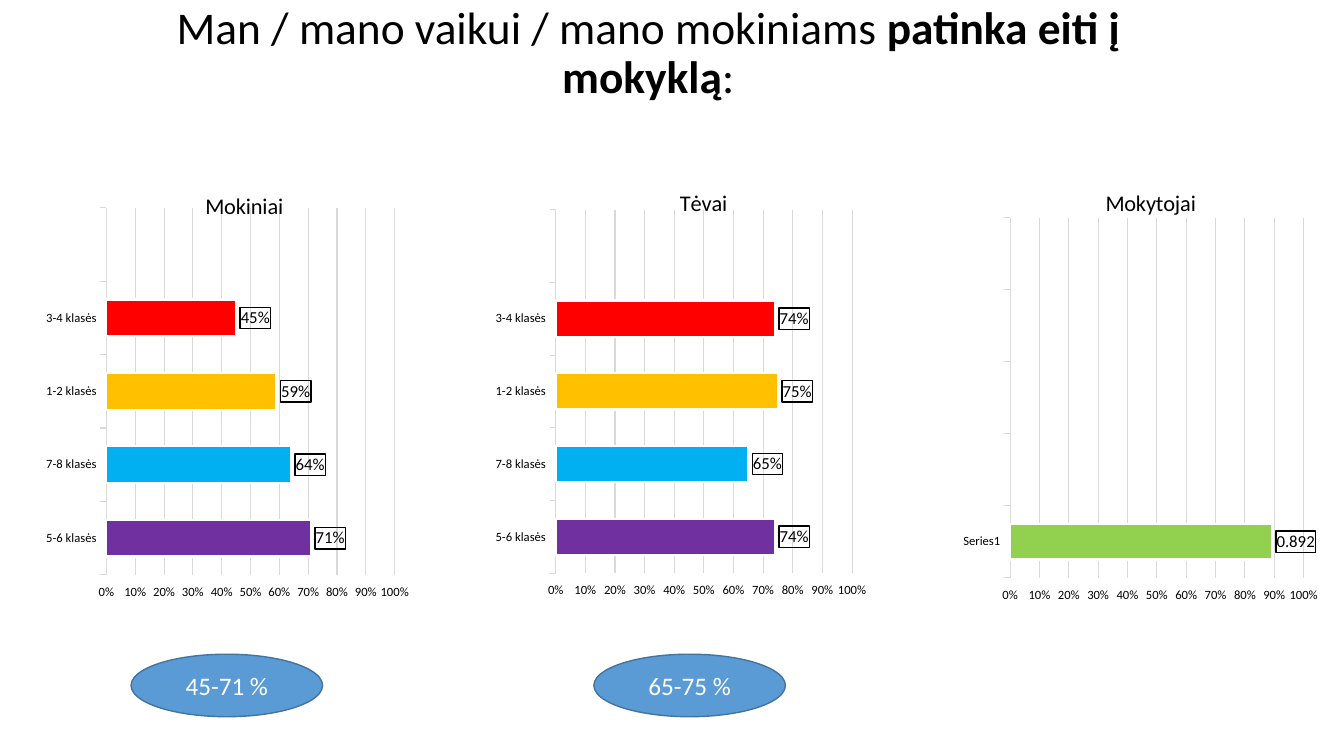
from lxml.etree import SubElement
from pptx import Presentation
from pptx.chart.data import CategoryChartData
from pptx.dml.color import RGBColor
from pptx.enum.chart import XL_CHART_TYPE, XL_LABEL_POSITION, XL_TICK_MARK
from pptx.enum.shapes import MSO_SHAPE
from pptx.enum.text import MSO_ANCHOR, PP_ALIGN
from pptx.oxml import parse_xml
from pptx.oxml.ns import nsdecls, qn
from pptx.util import Inches, Pt

FONT = "Calibri"
BLACK = RGBColor(0x00, 0x00, 0x00)
WHITE = RGBColor(0xFF, 0xFF, 0xFF)
GRID = RGBColor(0xD9, 0xD9, 0xD9)
BLUE = RGBColor(0x5B, 0x9B, 0xD5)
DARK_BLUE = RGBColor(0x43, 0x73, 0x9E)
PURPLE = RGBColor(0x70, 0x30, 0xA0)
SKY = RGBColor(0x00, 0xB0, 0xF0)
AMBER = RGBColor(0xFF, 0xC0, 0x00)
RED = RGBColor(0xFF, 0x00, 0x00)
GREEN = RGBColor(0x92, 0xD0, 0x50)


def set_font(font, size, color=BLACK, bold=False):
    font.name, font.size, font.bold = FONT, Pt(size), bold
    font.color.rgb = color


def set_layout(parent, index, **shares):
    """Place a chart part by shares of the chart's size."""
    for old in parent.findall(qn("c:layout")):
        parent.remove(old)
    layout = parse_xml(f"<c:layout {nsdecls('c')}/>")
    manual = SubElement(layout, qn("c:manualLayout"))
    if "w" in shares:
        SubElement(manual, qn("c:layoutTarget")).set("val", "inner")
    for axis in "xy":
        SubElement(manual, qn(f"c:{axis}Mode")).set("val", "edge")
    for name, share in shares.items():
        SubElement(manual, qn(f"c:{name}")).set("val", str(share))
    parent.insert(index, layout)


prs = Presentation()
prs.slide_width, prs.slide_height = Inches(13.33), Inches(7.5)
slide = prs.slides.add_slide(prs.slide_layouts[6])

# Heading
box = slide.shapes.add_textbox(Inches(0.85), Inches(0.05), Inches(11.16), Inches(0.97))
tf = box.text_frame
tf.word_wrap = True
tf.vertical_anchor = MSO_ANCHOR.MIDDLE
p = tf.paragraphs[0]
p.alignment = PP_ALIGN.CENTER
p.line_spacing = 0.9
for text, bold in [("Man / mano vaikui / mano mokiniams ", False),
                   ("patinka eiti į mokyklą", True), (":", False)]:
    r = p.add_run()
    r.text = text
    set_font(r.font, 32.4, bold=bold)

# Bar charts: name, frame, categories, values, bar colours, label format, title and plot shares
CLASSES = ["5-6 klasės", "7-8 klasės", "1-2 klasės", "3-4 klasės", ""]
CLASS_COLORS = [PURPLE, SKY, AMBER, RED]
CHARTS = [
    ("Mokiniai", (0.44, 1.66, 3.62, 4.73), CLASSES, [0.71, 0.64, 0.59, 0.45, None],
     CLASS_COLORS, "0%", (0.43, 0.04), (0.17, 0.085, 0.79, 0.77)),
    ("Tėvai", (4.88, 1.58, 3.72, 4.81), CLASSES, [0.74, 0.65, 0.75, 0.74, None],
     CLASS_COLORS, "0%", (0.49, 0.05), (0.17, 0.104, 0.79, 0.75)),
    ("Mokytojai", (9.54, 1.58, 3.55, 4.81), ["Series1"] + [""] * 4, [0.892] + [None] * 4,
     [GREEN], "General", (0.39, 0.05), (0.135, 0.121, 0.82, 0.742)),
]
for name, frame, cats, values, colors, label_format, title_at, plot_at in CHARTS:
    data = CategoryChartData()
    data.categories = cats
    data.add_series(name, values)
    chart = slide.shapes.add_chart(
        XL_CHART_TYPE.BAR_CLUSTERED, *map(Inches, frame), data).chart
    set_font(chart.font, 10)
    chart.has_legend = False
    tf = chart.chart_title.text_frame
    tf.text = name
    set_font(tf.paragraphs[0].runs[0].font, 16)
    set_layout(tf._txBody.getparent().getparent(), 1, **dict(zip("xy", title_at)))
    set_layout(chart._chartSpace.chart.plotArea, 0, **dict(zip("xywh", plot_at)))

    for axis in (chart.category_axis, chart.value_axis):
        axis.major_tick_mark = XL_TICK_MARK.OUTSIDE
        axis.minor_tick_mark = XL_TICK_MARK.NONE
        set_font(axis.tick_labels.font, 9)
    line = chart.category_axis.format.line
    line.color.rgb, line.width = GRID, Pt(0.75)
    axis = chart.value_axis
    axis.minimum_scale, axis.maximum_scale, axis.major_unit = 0, 1, 0.1
    axis.format.line.fill.background()
    axis.has_major_gridlines = True
    line = axis.major_gridlines.format.line
    line.color.rgb, line.width = GRID, Pt(0.75)
    axis.tick_labels.number_format = "0%"
    axis.tick_labels.number_format_is_linked = False

    plot = chart.plots[0]
    plot.gap_width = 100
    plot.vary_by_categories = False
    series = plot.series[0]
    series.invert_if_negative = False
    bars = [series.points[i].format for i in range(len(colors))]
    for bar, color in zip([series.format] + bars, [BLUE] + colors):
        bar.fill.solid()
        bar.fill.fore_color.rgb = color
        bar.line.color.rgb, bar.line.width = WHITE, Pt(1.5)

    labels = series.data_labels
    labels.show_value = True
    labels.position = XL_LABEL_POSITION.OUTSIDE_END
    labels.number_format = label_format
    labels.number_format_is_linked = False
    set_font(labels.font, 12)
    labels._element.find(qn("c:txPr")).addprevious(parse_xml(
        f'<c:spPr {nsdecls("c", "a")}><a:noFill/><a:ln w="12700"><a:solidFill>'
        f'<a:srgbClr val="{BLACK}"/></a:solidFill></a:ln></c:spPr>'))

# Ranges below the charts
for left, text in [(5.89, "65-75 %"), (1.3, "45-71 %")]:
    sp = slide.shapes.add_shape(
        MSO_SHAPE.OVAL, Inches(left), Inches(6.49), Inches(1.9), Inches(0.62))
    sp.shadow.inherit = False
    sp.fill.solid()
    sp.fill.fore_color.rgb = BLUE
    sp.line.color.rgb, sp.line.width = DARK_BLUE, Pt(1)
    tf = sp.text_frame
    tf.text = text
    tf.vertical_anchor = MSO_ANCHOR.MIDDLE
    tf.paragraphs[0].alignment = PP_ALIGN.CENTER
    set_font(tf.paragraphs[0].runs[0].font, 18, WHITE)

prs.save("out.pptx")
